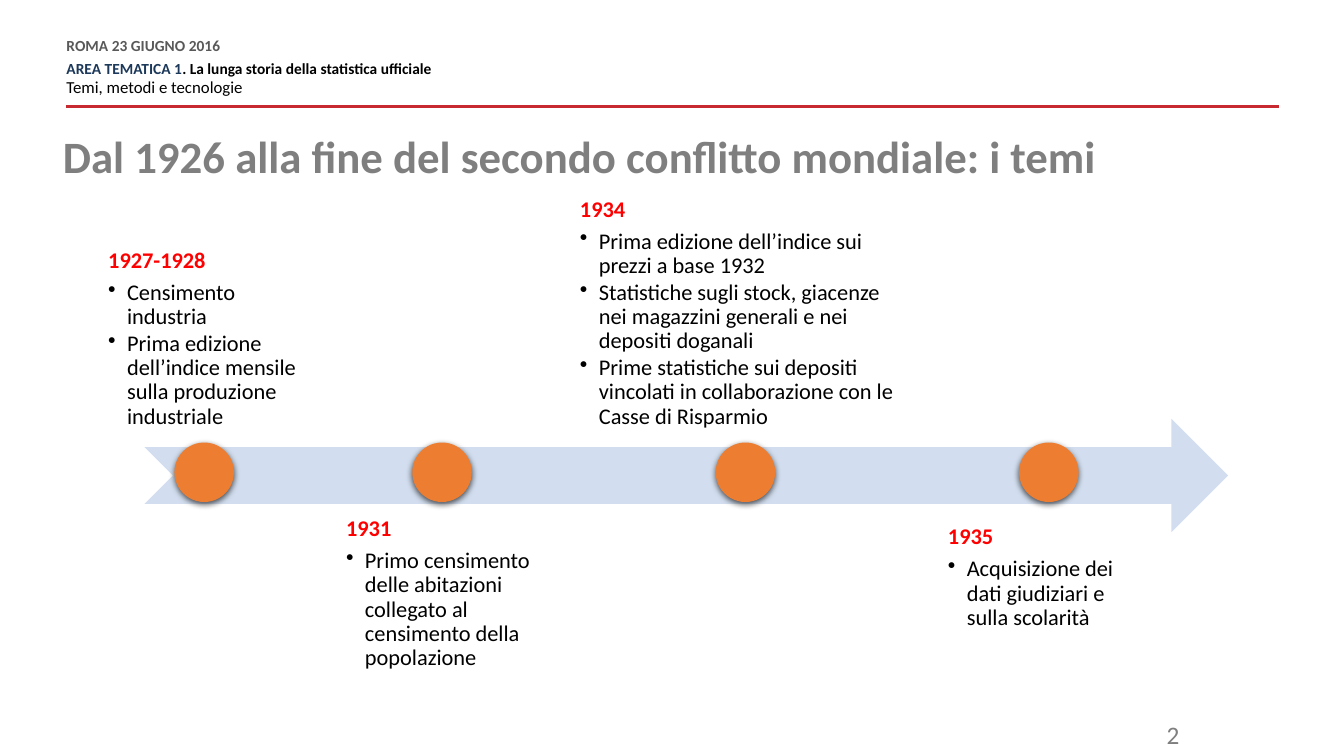
import pptx
import pptx.util
import pptx.dml.color
import pptx.enum.shapes
import pptx.enum.text
import pptx.oxml
import pptx.oxml.ns

Pt = pptx.util.Pt
RGBColor = pptx.dml.color.RGBColor
SHAPE = pptx.enum.shapes.MSO_SHAPE
ANCHOR = pptx.enum.text.MSO_ANCHOR
ALIGN = pptx.enum.text.PP_ALIGN

BLACK = RGBColor(0x00, 0x00, 0x00)
RED = RGBColor(0xFF, 0x00, 0x00)
RULE_RED = RGBColor(0xC7, 0x2A, 0x31)
NAVY = RGBColor(0x1C, 0x38, 0x5A)
GREY = RGBColor(0x7F, 0x7F, 0x7F)
DARK_GREY = RGBColor(0x59, 0x59, 0x59)
PALE_BLUE = RGBColor(0xD2, 0xDE, 0xEF)
ORANGE = RGBColor(0xED, 0x7D, 0x31)

FONT = "Calibri"
DOT_SIZE = 42.5
DOT_TOP = 316.1
LABEL_HEIGHT = 169.9
ABOVE_TOP = 145.4

MILESTONES = [
    ("1927-1928", 124.6, 68.4, ABOVE_TOP, 162, ANCHOR.BOTTOM, [
        "Censimento industria",
        "Prima edizione dell’indice mensile sulla produzione industriale"]),
    ("1931", 294.5, 238.3, 360.7, 162, ANCHOR.TOP, [
        "Primo censimento delle abitazioni collegato al censimento della popolazione"]),
    ("1934", 511.2, 405.4, ABOVE_TOP, 254.9, ANCHOR.BOTTOM, [
        "Prima edizione dell’indice sui prezzi a base 1932",
        "Statistiche sugli stock, giacenze nei magazzini generali e nei depositi doganali",
        "Prime statistiche sui depositi vincolati in collaborazione con le Casse di Risparmio"]),
    ("1935", 727.9, 668.2, 366.5, 162, ANCHOR.TOP, [
        "Acquisizione dei dati giudiziari e sulla scolarità"]),
]


def add_box(s, x, y, w, h, inset=0, anchor=ANCHOR.TOP):
    """Add a wrapping text box and return its text frame."""
    tf = s.shapes.add_textbox(Pt(x), Pt(y), Pt(w), Pt(h)).text_frame
    tf.word_wrap = True
    tf.vertical_anchor = anchor
    tf.margin_left = tf.margin_right = Pt(inset)
    tf.margin_top = tf.margin_bottom = Pt(inset)
    return tf


def add_run(p, text, size=16, color=BLACK, bold=False):
    """Append a formatted run to a paragraph."""
    r = p.add_run()
    r.text = text
    r.font.name = FONT
    r.font.size = Pt(size)
    r.font.bold = bold
    r.font.color.rgb = color


def add_text(tf, text, spacing=0.9, before=0, after=0, align=ALIGN.LEFT,
             bullet=False, **font):
    """Write a paragraph in the first free place of a text frame."""
    p = tf.paragraphs[0]
    if p.runs:
        p = tf.add_paragraph()
    p.line_spacing = spacing
    p.space_before = Pt(before)
    p.space_after = Pt(after)
    p.alignment = align
    if bullet:
        pPr = p._p.get_or_add_pPr()
        pPr.set("marL", str(Pt(13.5)))
        pPr.set("indent", str(-Pt(13.5)))
        mark = pptx.oxml.parse_xml(
            '<a:buChar %s char="•"/>' % pptx.oxml.ns.nsdecls("a"))
        pPr.append(mark)
    add_run(p, text, **font)
    return p


def add_solid(s, kind, x, y, w, h, color):
    """Add a filled preset shape with no outline or shadow."""
    sp = s.shapes.add_shape(kind, Pt(x), Pt(y), Pt(w), Pt(h))
    sp.fill.solid()
    sp.fill.fore_color.rgb = color
    sp.line.fill.background()
    sp.shadow.inherit = False
    return sp


def add_dot(s, x):
    """Add a timeline dot with a soft shadow below it."""
    sp = add_solid(s, SHAPE.OVAL, x, DOT_TOP, DOT_SIZE, DOT_SIZE, ORANGE)
    effects = sp._element.spPr.find(pptx.oxml.ns.qn("a:effectLst"))
    effects.append(pptx.oxml.parse_xml(
        '<a:outerShdw %s blurRad="%d" dist="%d" dir="5400000" rotWithShape="0">'
        '<a:srgbClr val="000000"><a:alpha val="63000"/></a:srgbClr></a:outerShdw>'
        % (pptx.oxml.ns.nsdecls("a"), Pt(4.5), Pt(1.5))))


def add_rule(s, x1, x2, y):
    """Add the red line under the header."""
    line = s.shapes.add_connector(
        pptx.enum.shapes.MSO_CONNECTOR.STRAIGHT, Pt(x1), Pt(y), Pt(x2), Pt(y))
    line.line.color.rgb = RULE_RED
    line.line.width = Pt(2)
    line._element.spPr.append(pptx.oxml.parse_xml(
        "<a:effectLst %s/>" % pptx.oxml.ns.nsdecls("a")))


def add_header(s):
    """Add the event, the thematic area and the rule below them."""
    add_rule(s, 47.5, 913.7, 76.3)
    tf = add_box(s, 47.5, 28.1, 600.5, 42.5)
    add_text(tf, "ROMA 23 GIUGNO 2016", spacing=Pt(10.8), after=6,
             size=11, color=DARK_GREY, bold=True)
    p = add_text(tf, "AREA TEMATICA 1", spacing=Pt(10.8),
                 size=11, color=NAVY, bold=True)
    add_run(p, ". La lunga storia della statistica ufficiale", size=11, bold=True)
    add_text(tf, "Temi, metodi e tecnologie", spacing=Pt(10.8),
             before=3, after=6, size=12)


def add_milestone(s, year, dot_x, x, y, w, anchor, topics):
    """Add a year with its topics and its dot on the timeline."""
    tf = add_box(s, x, y, w, LABEL_HEIGHT, inset=8.9, anchor=anchor)
    add_text(tf, year, after=5.6, color=RED, bold=True)
    for topic in topics:
        add_text(tf, topic, after=2, bullet=True)
    add_dot(s, dot_x)


def main():
    """Build the timeline slide and save it."""
    prs = pptx.Presentation()
    prs.slide_width = Pt(960)
    prs.slide_height = Pt(540)
    s = prs.slides.add_slide(prs.slide_layouts[6])
    add_header(s)
    tf = add_box(s, 44.9, 90, 871.9, 41, anchor=ANCHOR.BOTTOM)
    add_text(tf, "Dal 1926 alla fine del secondo conflitto mondiale: i temi",
             size=32, color=GREY, bold=True)
    tf = add_box(s, 633.6, 510.5, 216, 28.8, inset=7.2, anchor=ANCHOR.MIDDLE)
    add_text(tf, "2", spacing=1.0, align=ALIGN.RIGHT, size=18, color=GREY)
    add_solid(s, SHAPE.NOTCHED_RIGHT_ARROW, 103.2, 299.2, 774, 80.9, PALE_BLUE)
    for milestone in MILESTONES:
        add_milestone(s, *milestone)
    prs.save("out.pptx")


if __name__ == "__main__":
    main()
